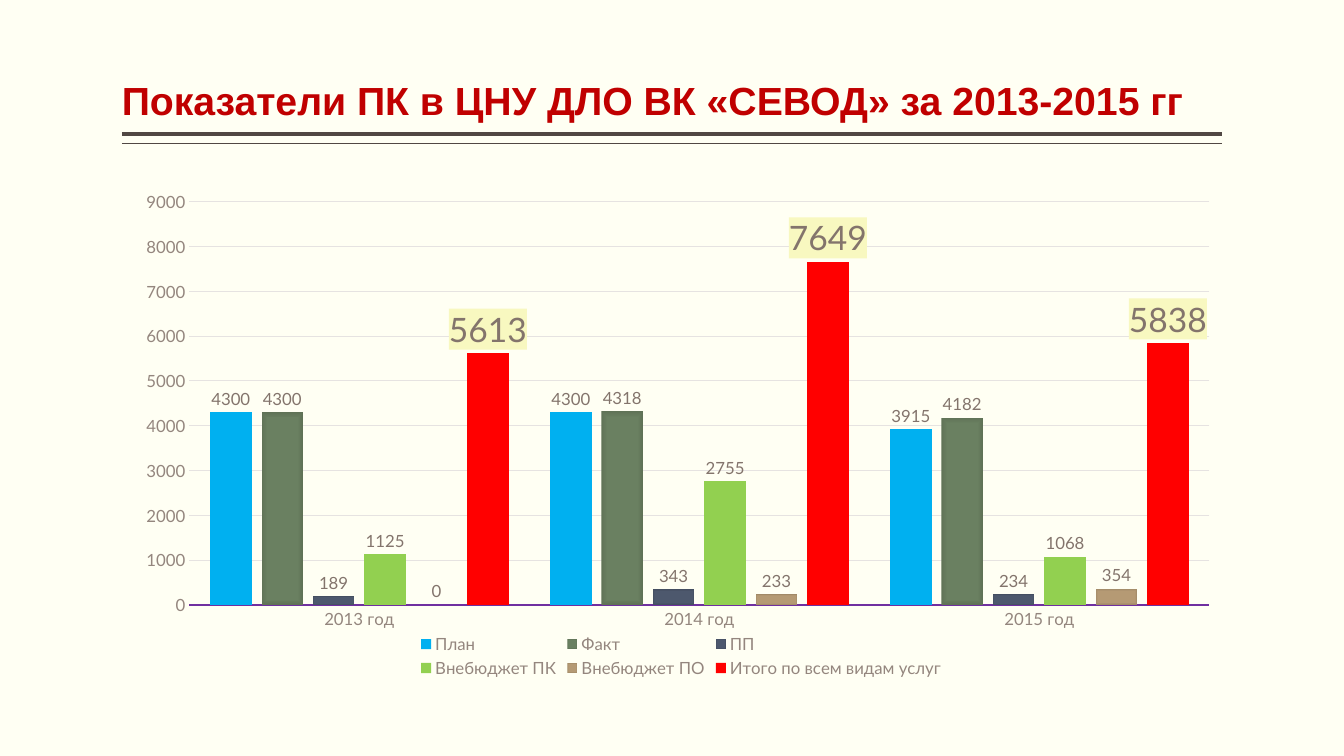
from dataclasses import dataclass

from lxml import etree
from pptx import Presentation
from pptx.chart.data import CategoryChartData
from pptx.dml.color import RGBColor
from pptx.enum.chart import XL_CHART_TYPE as ChartType
from pptx.enum.chart import XL_LABEL_POSITION as LabelPosition
from pptx.enum.chart import XL_LEGEND_POSITION as LegendPosition
from pptx.enum.chart import XL_TICK_MARK as TickMark
from pptx.enum.shapes import MSO_CONNECTOR as Connector
from pptx.enum.text import MSO_ANCHOR as Anchor
from pptx.oxml import parse_xml
from pptx.oxml.ns import nsdecls, qn
from pptx.util import Pt


@dataclass(frozen=True)
class Theme:
    background: str = "FFFFF3"
    title: str = "C00000"
    rule: str = "514843"
    axis_text: str = "94867E"
    label_text: str = "83746C"
    highlight: str = "F8F8C0"
    baseline: str = "7030A0"
    grid: str = "E6E3E1"
    title_font: str = "Arial"
    chart_font: str = "Lato"
    title_size: int = 28
    chart_size: int = 10
    axis_size: int = 12
    total_size: int = 24


@dataclass(frozen=True)
class Box:
    left: float
    top: float
    width: float
    height: float

    def lengths(self):
        return [Pt(value) for value in (self.left, self.top, self.width, self.height)]


THEME = Theme()
TITLE = "Показатели ПК в ЦНУ ДЛО ВК «СЕВОД» за 2013-2015 гг"
YEARS = ["2013 год", "2014 год", "2015 год"]
SERIES = [
    ("План", (4300, 4300, 3915), ["00B0F0"]),
    ("Факт", (4300, 4318, 4182), ["6B8162", "6A8061", "5F7256"]),
    ("ПП", (189, 343, 234), ["4E596E", "4D586D", "444E61"]),
    ("Внебюджет ПК", (1125, 2755, 1068), ["92D050"]),
    ("Внебюджет ПО", (0, 233, 354), ["B79B75", "B59A74", "A18967"]),
    ("Итого по всем видам услуг", (5613, 7649, 5838), ["FF0000"]),
]
TOTAL = SERIES[-1][0]
STOPS = (0, 71, 100)
PLOT = {"x": 0.053, "y": 0.047, "w": 0.927, "h": 0.8}


def style_font(font, name, size, color, bold=False):
    font.name = name
    font.size = Pt(size)
    font.bold = bold
    font.color.rgb = RGBColor.from_string(color)


def add_title(page, box):
    title = page.shapes.add_textbox(*box.lengths())
    frame = title.text_frame
    frame.word_wrap = True
    frame.vertical_anchor = Anchor.BOTTOM
    frame.margin_left = frame.margin_right = 0
    frame.margin_top = frame.margin_bottom = Pt(3.6)
    para = frame.paragraphs[0]
    para.text = TITLE
    para.line_spacing = 0.9
    style_font(para.font, THEME.title_font, THEME.title_size, THEME.title, True)


def add_rules(page, box):
    for top, weight in ((box.top, 3), (box.top + box.height, 1)):
        rule = page.shapes.add_connector(
            Connector.STRAIGHT, Pt(box.left), Pt(top), Pt(box.left + box.width), Pt(top)
        )
        rule.line.color.rgb = RGBColor.from_string(THEME.rule)
        rule.line.width = Pt(weight)
        etree.SubElement(rule._element.spPr, qn("a:effectLst"))


def fill_series(series, colors):
    if len(colors) == 1:
        series.format.fill.solid()
        series.format.fill.fore_color.rgb = RGBColor.from_string(colors[0])
        return
    stops = "".join(
        f'<a:gs pos="{stop * 1000}"><a:srgbClr val="{color}"/></a:gs>'
        for stop, color in zip(STOPS, colors)
    )
    gradient = parse_xml(
        f'<a:gradFill {nsdecls("a")} rotWithShape="1"><a:gsLst>{stops}</a:gsLst>'
        '<a:path path="rect"><a:fillToRect l="50000" t="50000" r="50000" b="50000"/>'
        "</a:path></a:gradFill>"
    )
    series._element.get_or_add_spPr().insert(0, gradient)


def label_series(series):
    is_total = series.name == TOTAL
    labels = series.data_labels
    labels.show_value = True
    labels.position = LabelPosition.OUTSIDE_END
    size = THEME.total_size if is_total else THEME.axis_size
    style_font(labels.font, THEME.chart_font, size, THEME.label_text)
    if is_total:
        highlight = parse_xml(
            f'<c:spPr {nsdecls("c", "a")}><a:solidFill>'
            f'<a:srgbClr val="{THEME.highlight}"/></a:solidFill></c:spPr>'
        )
        labels._element.find(qn("c:txPr")).addprevious(highlight)


def place_plot(chart):
    area = chart._chartSpace.chart.plotArea
    for layout in area.findall(qn("c:layout")):
        area.remove(layout)
    modes = "".join(f'<c:{side}Mode val="edge"/>' for side in "xy")
    sizes = "".join(f'<c:{side} val="{value}"/>' for side, value in PLOT.items())
    area.insert(0, parse_xml(
        f'<c:layout {nsdecls("c")}><c:manualLayout><c:layoutTarget val="inner"/>'
        f"{modes}{sizes}</c:manualLayout></c:layout>"
    ))


def style_axes(chart):
    years, values = chart.category_axis, chart.value_axis
    for axis in (years, values):
        axis.major_tick_mark = axis.minor_tick_mark = TickMark.NONE
        style_font(axis.tick_labels.font, THEME.chart_font, THEME.axis_size, THEME.axis_text)
    years.format.line.color.rgb = RGBColor.from_string(THEME.baseline)
    years.format.line.width = Pt(1.5)
    values.format.line.fill.background()
    values.minimum_scale, values.maximum_scale, values.major_unit = 0, 9000, 1000
    grid = values.major_gridlines.format.line
    grid.color.rgb = RGBColor.from_string(THEME.grid)
    grid.width = Pt(0.75)


def add_results_chart(page, box):
    table = CategoryChartData(number_format="General")
    table.categories = YEARS
    for name, values, _ in SERIES:
        table.add_series(name, values)
    chart = page.shapes.add_chart(ChartType.COLUMN_CLUSTERED, *box.lengths(), table).chart
    chart.has_title = False
    style_font(chart.font, THEME.chart_font, THEME.chart_size, THEME.rule)
    chart.has_legend = True
    chart.legend.position = LegendPosition.BOTTOM
    chart.legend.include_in_layout = False
    style_font(chart.legend.font, THEME.chart_font, THEME.axis_size, THEME.axis_text)
    plot = chart.plots[0]
    plot.gap_width, plot.overlap = 100, -24
    plot.vary_by_categories = False
    for series, (_, _, colors) in zip(plot.series, SERIES):
        fill_series(series, colors)
        label_series(series)
    style_axes(chart)
    place_plot(chart)


def main():
    deck = Presentation()
    deck.slide_width, deck.slide_height = Pt(960), Pt(540)
    page = deck.slides.add_slide(deck.slide_layouts[6])
    page.background.fill.solid()
    page.background.fill.fore_color.rgb = RGBColor.from_string(THEME.background)
    add_rules(page, Box(87, 95.75, 786, 6.8))
    add_title(page, Box(87, 5.75, 786, 86.5))
    add_results_chart(page, Box(93.6, 127.2, 786, 360))
    deck.save("out.pptx")


if __name__ == "__main__":
    main()
